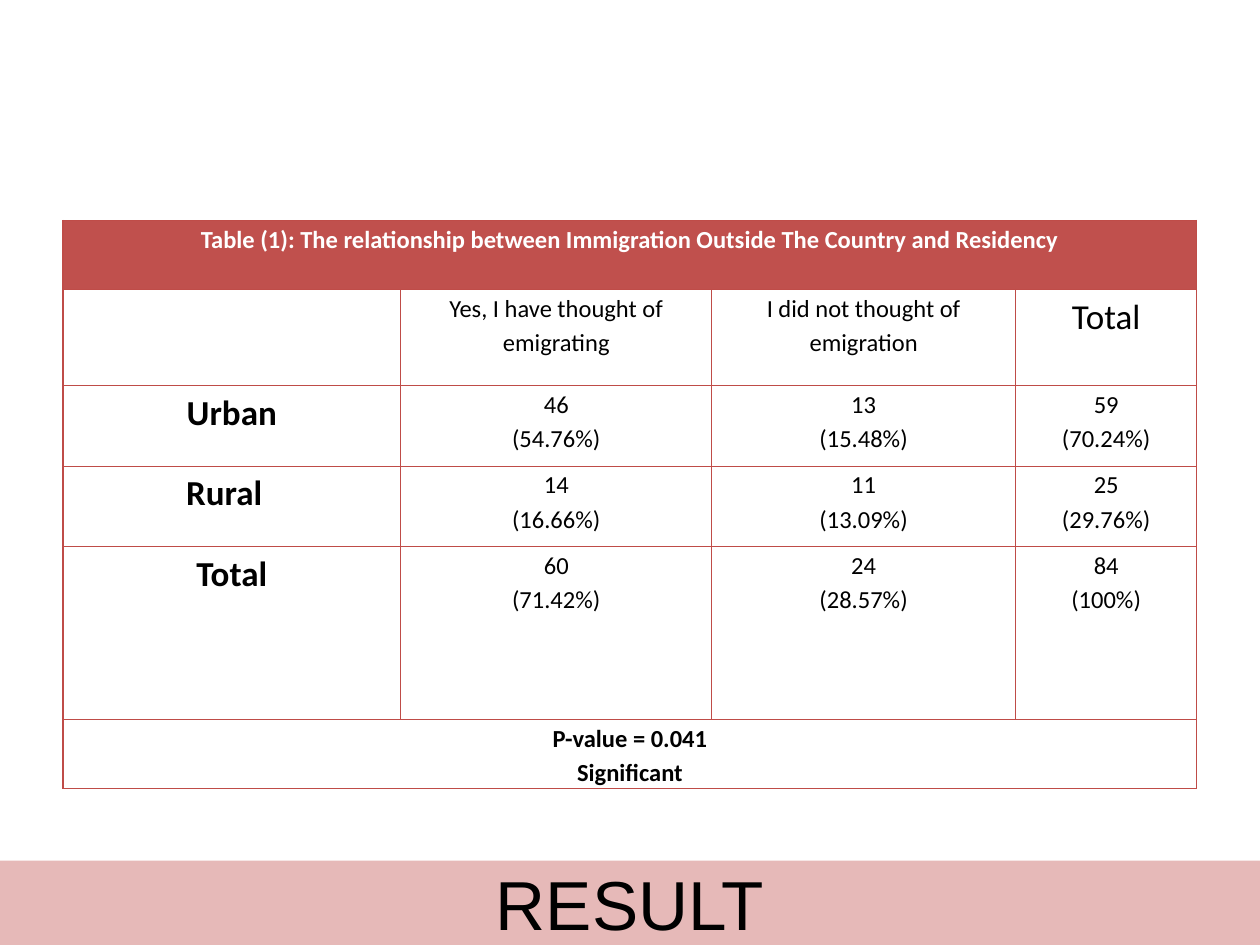
from dataclasses import dataclass

from lxml import etree
from pptx import Presentation
from pptx.dml.color import RGBColor
from pptx.enum.text import MSO_ANCHOR, PP_ALIGN
from pptx.oxml.ns import qn
from pptx.table import _Cell
from pptx.text.text import TextFrame
from pptx.util import Inches, Pt

CENTER = PP_ALIGN.CENTER
MIDDLE = MSO_ANCHOR.MIDDLE
TITLE_ONLY = 5

COLORS = {
    "banner": "E6B9B8",
    "header": "C0504D",
    "border": "BF4C48",
    "text": "000000",
    "white": "FFFFFF",
}
SLIDE_W, SLIDE_H = Inches(10), Inches(7.5)
BANNER_H = Inches(0.67)
COLUMN_WIDTHS = [2.68, 2.47, 2.41, 1.44]
ROW_HEIGHTS = [0.55, 0.76, 0.64, 0.64, 1.37, 0.55]


@dataclass
class Entry:
    lines: str
    size: float = 14
    bold: bool = False
    color: str = "text"
    fill: str = "white"
    right_inset: float = 0.1


@dataclass
class Residency:
    label: Entry
    counts: list[str]


HEADINGS = [
    Entry(""),
    Entry("Yes, I have thought of emigrating"),
    Entry("I did not thought of emigration"),
    Entry("Total", size=20),
]
RESIDENCIES = [
    Residency(Entry("Urban", 20, True),
              ["46\n(54.76%)", "13\n(15.48%)", "59\n(70.24%)"]),
    Residency(Entry("Rural", 20, True, right_inset=0.22),
              ["14\n(16.66%)", "11\n(13.09%)", "25\n(29.76%)"]),
    Residency(Entry("Total", 20, True),
              ["60\n(71.42%)", "24\n(28.57%)", "84\n(100%)"]),
]
CAPTION = Entry(
    "Table (1): The relationship between Immigration Outside The Country and Residency",
    bold=True, color="white", fill="header")
SIGNIFICANCE = Entry("P-value = 0.041\nSignificant", bold=True)


def rgb(name: str) -> RGBColor:
    return RGBColor.from_string(COLORS[name])


def write(frame: TextFrame, text: str, *, size: float, font: str = "Calibri",
          bold: bool = False, color: str = "text", spacing: float = 1.0) -> None:
    frame.text = text
    for paragraph in frame.paragraphs:
        paragraph.alignment = CENTER
        paragraph.line_spacing = spacing
        for run in paragraph.runs:
            run.font.size = Pt(size)
            run.font.name = font
            run.font.bold = bold
            run.font.color.rgb = rgb(color)


def outline(cell: _Cell) -> None:
    properties = cell._tc.get_or_add_tcPr()
    for side in ("a:lnL", "a:lnR", "a:lnT", "a:lnB"):
        line = etree.SubElement(properties, qn(side), w=str(Pt(0.75)))
        solid = etree.SubElement(line, qn("a:solidFill"))
        etree.SubElement(solid, qn("a:srgbClr"), val=COLORS["border"])


def fill_cell(cell: _Cell, entry: Entry) -> None:
    cell.margin_left, cell.margin_right = Inches(0.1), Inches(entry.right_inset)
    cell.margin_top = cell.margin_bottom = 0
    cell.fill.solid()
    cell.fill.fore_color.rgb = rgb(entry.fill)
    write(cell.text_frame, entry.lines, size=entry.size, bold=entry.bold,
          color=entry.color, spacing=1.15)


def add_banner(slide) -> None:
    banner = slide.shapes.title
    banner.left, banner.top = 0, SLIDE_H - BANNER_H
    banner.width, banner.height = SLIDE_W, BANNER_H
    banner.fill.solid()
    banner.fill.fore_color.rgb = rgb("banner")
    banner.text_frame.vertical_anchor = MIDDLE
    write(banner.text_frame, "RESULT", size=39.6, font="Arial")


def add_results(slide) -> None:
    table = slide.shapes.add_table(
        len(ROW_HEIGHTS), len(COLUMN_WIDTHS), Inches(0.5), Inches(1.75),
        Inches(sum(COLUMN_WIDTHS)), Inches(sum(ROW_HEIGHTS))).table
    table.horz_banding = False
    for column, width in zip(table.columns, COLUMN_WIDTHS):
        column.width = Inches(width)
    for row, height in zip(table.rows, ROW_HEIGHTS):
        row.height = Inches(height)
    for cell in table.iter_cells():
        outline(cell)

    last_row, last_column = len(ROW_HEIGHTS) - 1, len(COLUMN_WIDTHS) - 1
    for row, entry in ((0, CAPTION), (last_row, SIGNIFICANCE)):
        table.cell(row, 0).merge(table.cell(row, last_column))
        fill_cell(table.cell(row, 0), entry)

    body = [HEADINGS] + [[group.label, *map(Entry, group.counts)]
                         for group in RESIDENCIES]
    for row, entries in enumerate(body, start=1):
        for column, entry in enumerate(entries):
            fill_cell(table.cell(row, column), entry)


def main() -> None:
    deck = Presentation()
    deck.slide_width, deck.slide_height = SLIDE_W, SLIDE_H
    slide = deck.slides.add_slide(deck.slide_layouts[TITLE_ONLY])
    add_banner(slide)
    add_results(slide)
    deck.save("out.pptx")


if __name__ == "__main__":
    main()
